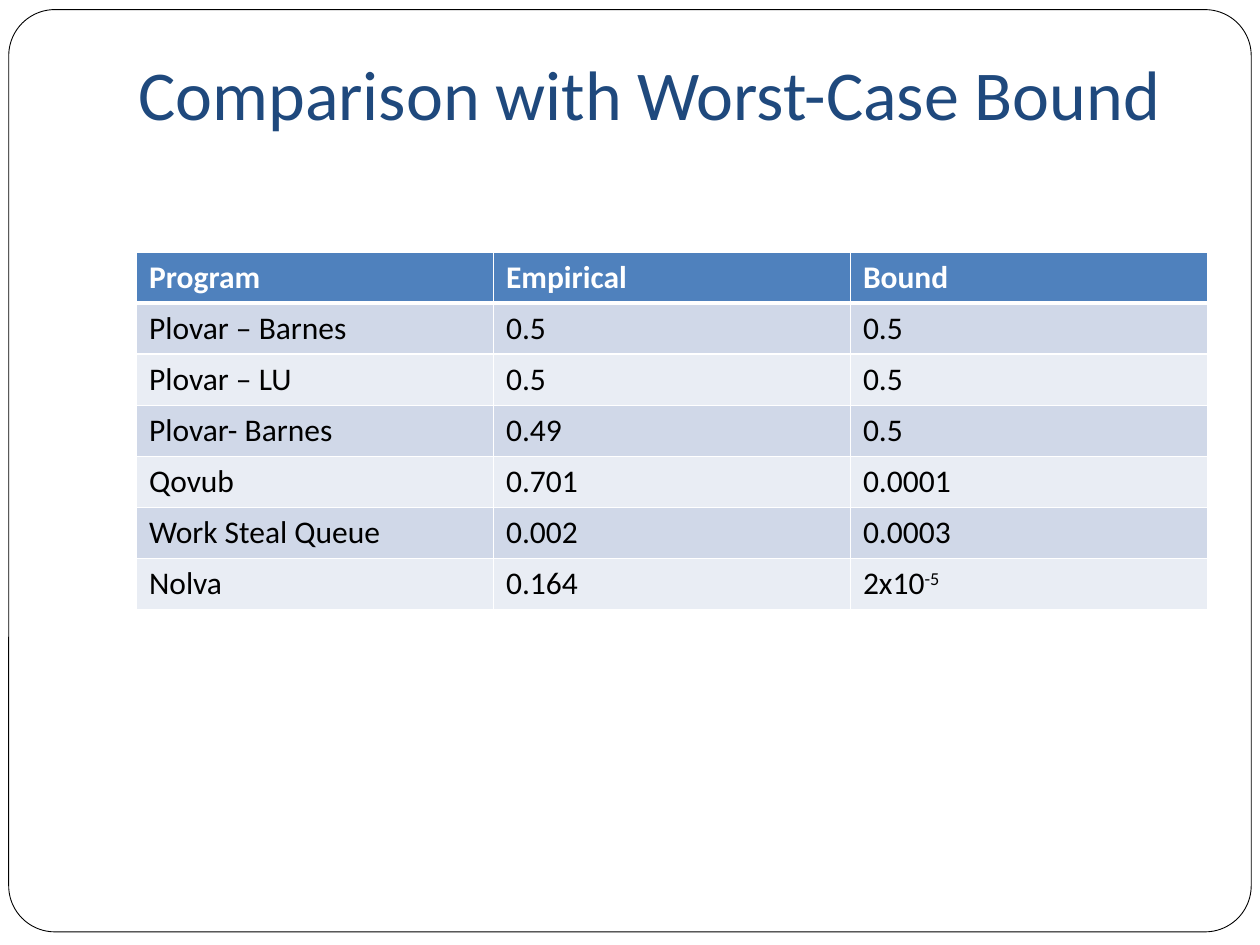
from lxml.etree import SubElement
from pptx import Presentation
from pptx.dml.color import RGBColor
from pptx.enum.shapes import MSO_SHAPE
from pptx.enum.text import MSO_ANCHOR
from pptx.oxml.ns import qn
from pptx.util import Pt

COLORS = {
    "title": "1F497D",
    "header": "4F81BD",
    "odd": "D0D8E8",
    "even": "E9EDF4",
    "white": "FFFFFF",
    "black": "000000",
}
RESULTS = [
    ("Program", "Empirical", "Bound"),
    ("Plovar – Barnes", "0.5", "0.5"),
    ("Plovar – LU", "0.5", "0.5"),
    ("Plovar- Barnes", "0.49", "0.5"),
    ("Qovub", "0.701", "0.0001"),
    ("Work Steal Queue", "0.002", "0.0003"),
    ("Nolva", "0.164", "2x10^-5"),
]


def rgb(name):
    """Return the named colour."""
    return RGBColor.from_string(COLORS[name])


def write(frame, text, size=18, color="black", bold=False):
    """Write text into a frame, raising whatever follows a caret."""
    base, _, exponent = text.partition("^")
    paragraph = frame.paragraphs[0]
    for part, raised in ((base, False), (exponent, True)):
        if part:
            run = paragraph.add_run()
            run.text = part
            font = run.font
            font.name, font.size, font.bold = "Calibri", Pt(size), bold
            font.color.rgb = rgb(color)
            if raised:
                run._r.get_or_add_rPr().set("baseline", "30000")


def add_frame(slide, left, top, width, height):
    """Draw the thin rounded border of the slide."""
    border = slide.shapes.add_shape(
        MSO_SHAPE.ROUNDED_RECTANGLE, Pt(left), Pt(top), Pt(width), Pt(height))
    border.adjustments[0] = 0.05
    border.shadow.inherit = False
    border.fill.background()
    border.line.color.rgb = rgb("black")
    border.line.width = Pt(0.5)


def add_title(slide, left, top, width, height):
    """Place the title at the bottom of its box."""
    title = slide.shapes.add_textbox(Pt(left), Pt(top), Pt(width), Pt(height))
    frame = title.text_frame
    frame.word_wrap = True
    frame.vertical_anchor = MSO_ANCHOR.BOTTOM
    frame.margin_bottom = Pt(7.2)
    write(frame, "Comparison with Worst-Case Bound", size=40, color="title")


def add_borders(cell, top, bottom):
    """Give a cell white borders, with its own top and bottom widths."""
    properties = cell._tc.get_or_add_tcPr()
    widths = {"a:lnL": 1, "a:lnR": 1, "a:lnT": top, "a:lnB": bottom}
    for position, (side, width) in enumerate(widths.items()):
        line = SubElement(properties, qn(side), w=str(Pt(width)))
        fill = SubElement(line, qn("a:solidFill"))
        SubElement(fill, qn("a:srgbClr"), val=COLORS["white"])
        properties.insert(position, line)


def add_results(slide, left, top, width, height):
    """Fill the table of empirical values and bounds."""
    rows, columns = len(RESULTS), len(RESULTS[0])
    table = slide.shapes.add_table(
        rows, columns, Pt(left), Pt(top), Pt(width), Pt(height)).table
    for column in table.columns:
        column.width = Pt(width / columns)
    for row_index, values in enumerate(RESULTS):
        header = row_index == 0
        band = "header" if header else ("even", "odd")[row_index % 2]
        table.rows[row_index].height = Pt(height / rows)
        for column_index, value in enumerate(values):
            cell = table.cell(row_index, column_index)
            cell.fill.solid()
            cell.fill.fore_color.rgb = rgb(band)
            write(cell.text_frame, value, bold=header,
                  color="white" if header else "black")
            add_borders(cell, top=3 if row_index == 1 else 1,
                        bottom=3 if header else 1)


def main():
    """Build and save the slide."""
    deck = Presentation()
    deck.slide_width, deck.slide_height = Pt(720), Pt(540)
    slide = deck.slides.add_slide(deck.slide_layouts[6])
    add_frame(slide, 5, 5.5, 710, 527)
    add_title(slide, 72, 21.6, 612, 62.4)
    add_results(slide, 78, 144, 612, 204.4)
    deck.save("out.pptx")


if __name__ == "__main__":
    main()
